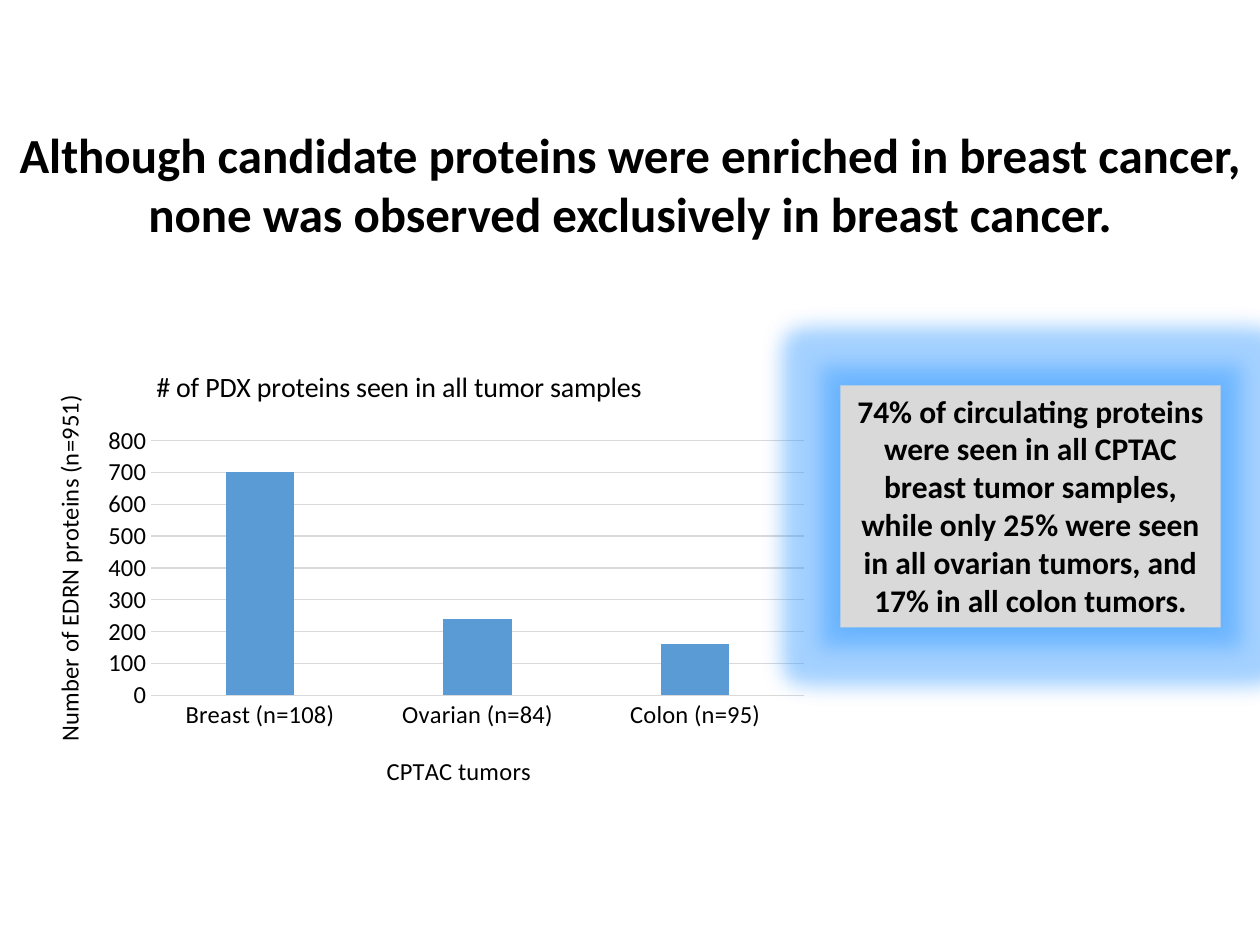
from lxml.etree import SubElement
from pptx import Presentation
from pptx.chart.data import CategoryChartData
from pptx.dml.color import RGBColor
from pptx.enum.chart import XL_CHART_TYPE, XL_TICK_MARK
from pptx.enum.shapes import MSO_SHAPE
from pptx.enum.text import MSO_ANCHOR, PP_ALIGN
from pptx.oxml import parse_xml
from pptx.oxml.ns import nsdecls, qn
from pptx.util import Cm, Pt

FONT = "Calibri"
COLORS = {"text": "000000", "bar": "5B9BD5", "grid": "D9D9D9",
          "callout": "D9D9D9", "glow": "3399FF"}

HEADLINE = ("Although candidate proteins were enriched in breast cancer, "
            "none was observed exclusively in breast cancer.")
CALLOUT = ("74% of circulating proteins were seen in all CPTAC breast tumor samples, "
           "while only 25% were seen in all ovarian tumors, and 17% in all colon tumors.")
TUMORS = {"Breast (n=108)": 700, "Ovarian (n=84)": 240, "Colon (n=95)": 160}
CHART_TITLE = "# of PDX proteins seen in all tumor samples"
CATEGORY_TITLE = "CPTAC tumors"
VALUE_TITLE = "Number of EDRN proteins (n=951)"


def color(name):
    return RGBColor.from_string(COLORS[name])


def style_font(font, size, bold=False):
    font.name, font.size, font.bold = FONT, Pt(size), bold
    font.color.rgb = color("text")


def write_text(shape, text, size):
    frame = shape.text_frame
    frame.word_wrap = True
    frame.vertical_anchor = MSO_ANCHOR.TOP
    paragraph = frame.paragraphs[0]
    paragraph.alignment = PP_ALIGN.CENTER
    run = paragraph.add_run()
    run.text = text
    style_font(run.font, size, bold=True)
    return paragraph


def set_layout(element, index, **fractions):
    """Place a chart part by fractions of the chart's size."""
    for old in element.findall(qn("c:layout")):
        element.remove(old)
    layout = parse_xml(f"<c:layout {nsdecls('c')}><c:manualLayout/></c:layout>")
    manual = layout[0]
    if "w" in fractions:
        SubElement(manual, qn("c:layoutTarget"), val="inner")
    for side in "xy":
        SubElement(manual, qn(f"c:{side}Mode"), val="edge")
    for key, value in fractions.items():
        SubElement(manual, qn(f"c:{key}"), val=str(value))
    element.insert(index, layout)


def write_chart_title(title, text, size, x, y):
    run = title.text_frame.paragraphs[0].add_run()
    run.text = text
    style_font(run.font, size)
    set_layout(title._element, 1, x=x, y=y)


def add_tumor_chart(slide):
    data = CategoryChartData()
    data.categories = list(TUMORS)
    data.add_series("Series 1", list(TUMORS.values()))
    chart = slide.shapes.add_chart(XL_CHART_TYPE.COLUMN_CLUSTERED, Cm(0.48), Cm(7.14),
                                   Cm(16.05), Cm(9.17), data).chart
    style_font(chart.font, 14)
    chart.has_legend = False
    chart.has_title = True
    write_chart_title(chart.chart_title, CHART_TITLE, 16, 0.16, 0.02)

    plot = chart.plots[0]
    plot.gap_width, plot.overlap, plot.vary_by_categories = 219, -27, False
    bars = plot.series[0].format.fill
    bars.solid()
    bars.fore_color.rgb = color("bar")
    set_layout(chart._chartSpace.chart.plotArea, 0, x=0.16, y=0.19, w=0.82, h=0.56)

    for axis, title, x, y in ((chart.category_axis, CATEGORY_TITLE, 0.45, 0.87),
                              (chart.value_axis, VALUE_TITLE, 0.03, 0.08)):
        axis.major_tick_mark = axis.minor_tick_mark = XL_TICK_MARK.NONE
        style_font(axis.tick_labels.font, 14)
        write_chart_title(axis.axis_title, title, 14, x, y)

    value_axis = chart.value_axis
    value_axis.minimum_scale, value_axis.maximum_scale, value_axis.major_unit = 0, 800, 100
    value_axis.format.line.fill.background()
    for line in (chart.category_axis.format.line, value_axis.major_gridlines.format.line):
        line.color.rgb = color("grid")
        line.width = Pt(0.75)


def add_glow(shape):
    """Surround the shape with a soft halo over a tighter blurred shadow."""
    tint = f'<a:srgbClr val="{COLORS["glow"]}"><a:alpha val="40000"/></a:srgbClr>'
    properties = shape._element.spPr
    for old in properties.findall(qn("a:effectLst")):
        properties.remove(old)
    properties.append(parse_xml(
        f'<a:effectLst {nsdecls("a")}><a:glow rad="{Cm(0.8)}">{tint}</a:glow>'
        f'<a:outerShdw blurRad="{Cm(0.4)}" dist="0" algn="ctr" rotWithShape="0">{tint}'
        '</a:outerShdw></a:effectLst>'))


def main():
    presentation = Presentation()
    presentation.slide_width, presentation.slide_height = Cm(25.4), Cm(19.05)
    slide = presentation.slides.add_slide(presentation.slide_layouts[6])

    headline = slide.shapes.add_textbox(Cm(0.1), Cm(2.39), Cm(25.2), Cm(2.64))
    write_text(headline, HEADLINE, 28)

    add_tumor_chart(slide)

    callout = slide.shapes.add_shape(MSO_SHAPE.RECTANGLE, Cm(16.94), Cm(7.77),
                                     Cm(7.67), Cm(4.88))
    callout.fill.solid()
    callout.fill.fore_color.rgb = color("callout")
    callout.line.fill.background()
    add_glow(callout)
    write_text(callout, CALLOUT, 18).space_after = Pt(12)

    presentation.save("out.pptx")


if __name__ == "__main__":
    main()
